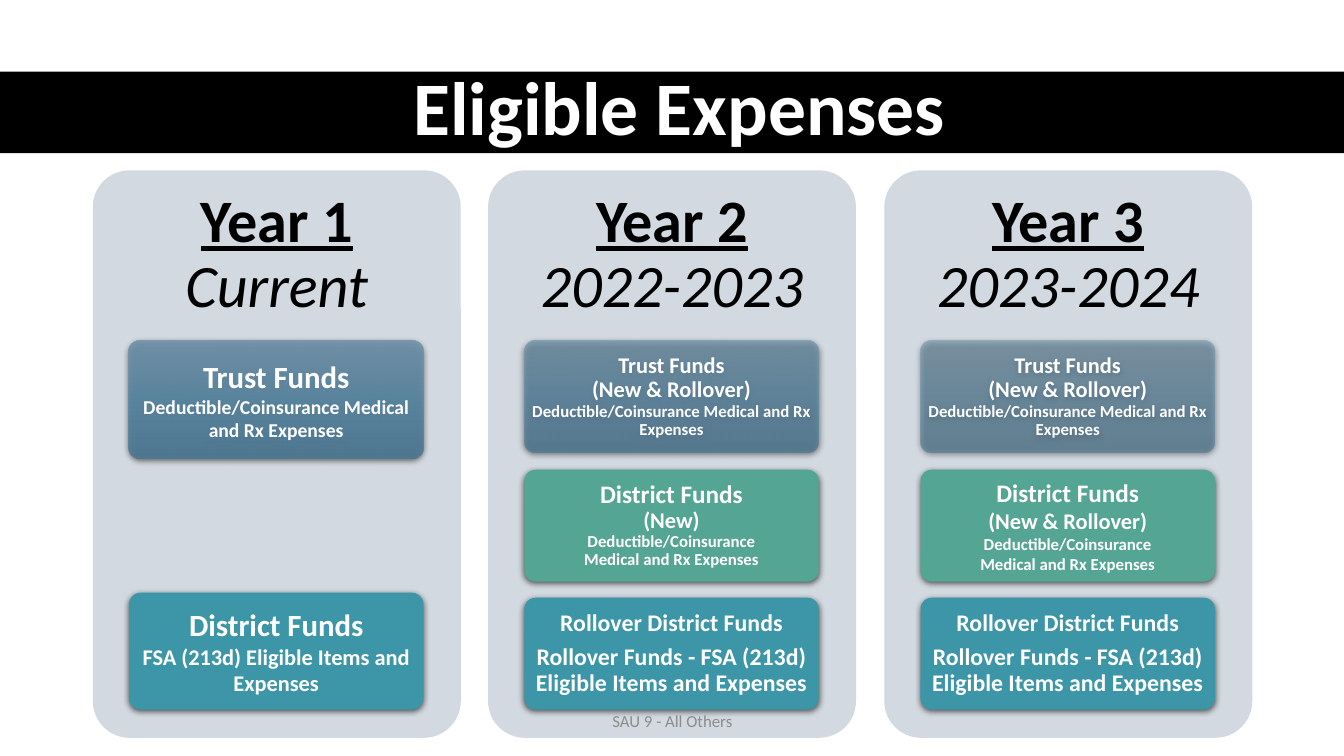
from copy import deepcopy
from lxml.etree import SubElement
from pptx import Presentation
from pptx.dml.color import RGBColor
from pptx.enum.shapes import MSO_SHAPE
from pptx.enum.text import MSO_ANCHOR, MSO_AUTO_SIZE, PP_ALIGN
from pptx.oxml import parse_xml
from pptx.oxml.ns import nsdecls
from pptx.util import Pt

PX = 9144  # 100 px to the inch
BLACK = RGBColor(0x00, 0x00, 0x00)
WHITE = RGBColor(0xFF, 0xFF, 0xFF)
GREY = RGBColor(0x8C, 0x8C, 0x8C)
PANEL = RGBColor(0xD2, 0xD9, 0xE0)
GREEN = RGBColor(0x55, 0xA5, 0x94)
TEAL = RGBColor(0x3D, 0x96, 0xA7)
BLUES = RGBColor(0x72, 0x94, 0xAB), RGBColor(0x5A, 0x88, 0xA4), RGBColor(0x4D, 0x79, 0x95)

SHADOW = (f'<a:effectLst {nsdecls("a")}><a:outerShdw blurRad="57150" dist="19050" '
          'dir="5400000" algn="ctr" rotWithShape="0"><a:srgbClr val="000000">'
          '<a:alpha val="63000"/></a:srgbClr></a:outerShdw></a:effectLst>')


def write(shape, paras, color, inset=(10, 5), line=1.0, after=0):
    """Fill a shape with paragraphs, each a list of (text, font values)."""
    frame = shape.text_frame
    side, top = (n * PX for n in inset)
    frame_vals = dict(word_wrap=True, auto_size=MSO_AUTO_SIZE.NONE,
                      vertical_anchor=MSO_ANCHOR.MIDDLE, margin_left=side,
                      margin_right=side, margin_top=top, margin_bottom=top)
    for key, val in frame_vals.items():
        setattr(frame, key, val)
    for i, parts in enumerate(paras):
        para = frame.add_paragraph() if i else frame.paragraphs[0]
        vals = dict(alignment=PP_ALIGN.CENTER, line_spacing=line,
                    space_before=Pt(0), space_after=Pt(after))
        for key, val in vals.items():
            setattr(para, key, val)
        prev = None
        for text, font in parts:
            for row in text.split("\n"):
                if prev is not None:
                    # A break takes the size of the line it ends
                    para.add_line_break()
                    para._p[-1].append(deepcopy(prev._r.rPr))
                run = prev = para.add_run()
                run.text = row
                run.font.color.rgb = color
                for key, val in dict(name="Calibri", **font).items():
                    setattr(run.font, key, val)


def block(kind, x, y, w, h, color):
    """Add a plain filled shape with no outline."""
    shape = slide.shapes.add_shape(kind, x * PX, y * PX, w * PX, h * PX)
    shape.shadow.inherit = False
    shape.fill.solid()
    shape.fill.fore_color.rgb = color
    shape.line.fill.background()
    if kind == MSO_SHAPE.ROUNDED_RECTANGLE:
        shape.adjustments[0] = 0.1
    return shape


deck = Presentation()
deck.slide_width, deck.slide_height = 1333 * PX, 750 * PX
slide = deck.slides.add_slide(deck.slide_layouts[5])

# Title on a black band
title = slide.shapes.title
for key, val in dict(left=61, top=70, width=1226, height=81).items():
    setattr(title, key, val * PX)
write(title, [[("Eligible Expenses", dict(size=Pt(54), bold=True))]], WHITE, line=0.9)
band = block(MSO_SHAPE.RECTANGLE, 0, 71, 1333, 81, BLACK)
title._element.addprevious(band._element)

# Card wording: each paragraph is a list of (text, size)
COVER = "Deductible/Coinsurance Medical and Rx Expenses"
SPLIT = "Deductible/Coinsurance\nMedical and Rx Expenses"
BOTH = "(New & Rollover)"
TRUST = "Trust Funds"
MIX = [[(TRUST + "\n" + BOTH, 16), (COVER, 12)]]
ROLL = [[("Rollover District Funds", 17)],
        [("Rollover Funds - FSA (213d) Eligible Items and Expenses", 17)]]
FIRST = [[(TRUST, 22), (COVER, 14)]]
FSA = [[("District Funds", 22)], [("FSA (213d) Eligible Items and Expenses", 16)]]
NEW, MIXED = ([[("District Funds", 18)], [(note, 16)], [(SPLIT, 12)]]
              for note in ("(New)", BOTH))

# Each year: name, period, opacity of the blue card, cards
# Each card: top, height, colour (None for blue), words, line spacing, space after, inset
YEARS = [
    ("Year 1", "Current", 90, [
        (338, 117, None, FIRST, 1.0, 0, (6, 5)),
        (588, 116, TEAL, FSA, 1.0, 0, (6, 5))]),
    ("Year 2", "2022-2023", 75, [
        (338, 111, None, MIX, 0.9, 0, (4, 3)),
        (466, 111, GREEN, NEW, 0.9, 0, (5, 4)),
        (593, 111, TEAL, ROLL, 0.9, 6, (5, 4))]),
    ("Year 3", "2023-2024", 60, [
        (338, 111, None, MIX, 0.9, 0, (4, 3)),
        (466, 111, GREEN, MIXED, 1.0, 0, (5, 4)),
        (593, 111, TEAL, ROLL, 0.9, 6, (5, 4))]),
]

# One panel per year
for i, (name, span, alpha, cards) in enumerate(YEARS):
    x = 92 + i * 785 // 2
    block(MSO_SHAPE.ROUNDED_RECTANGLE, x, 169, 365, 563, PANEL)
    head = slide.shapes.add_textbox(x * PX, 169 * PX, 365 * PX, 169 * PX)
    write(head, [[(name, dict(size=Pt(43), bold=True, underline=True)),
                  (span, dict(size=Pt(43), italic=True))]], BLACK, (18, 18), 0.9)

    # Fund cards
    for y, h, color, words, line, after, inset in cards:
        card = block(MSO_SHAPE.ROUNDED_RECTANGLE, x + 36, y, 292, h, color or BLUES[1])
        props = card._element.spPr
        if color is None:
            card.fill.gradient()
            card.fill.gradient_angle = 270
            stops = props.gradFill.gsLst
            stops.clear()
            for pos, blue in zip((0, 50000, 100000), BLUES):
                stop = SubElement(stops, stops.tag[:-5] + "gs", pos=str(pos))
                tint = SubElement(stop, stops.tag[:-5] + "srgbClr", val=str(blue))
                SubElement(tint, stops.tag[:-5] + "alpha", val=str(alpha * 1000))
        props.replace(props[-1], parse_xml(SHADOW))
        paras = [[(text, dict(size=Pt(size), bold=True)) for text, size in parts]
                 for parts in words]
        write(card, paras, WHITE, inset, line, after)

# Footer
foot = slide.shapes.add_textbox(442 * PX, 695 * PX, 450 * PX, 40 * PX)
write(foot, [[("SAU 9 - All Others", dict(size=Pt(12)))]], GREY)

deck.save("out.pptx")
